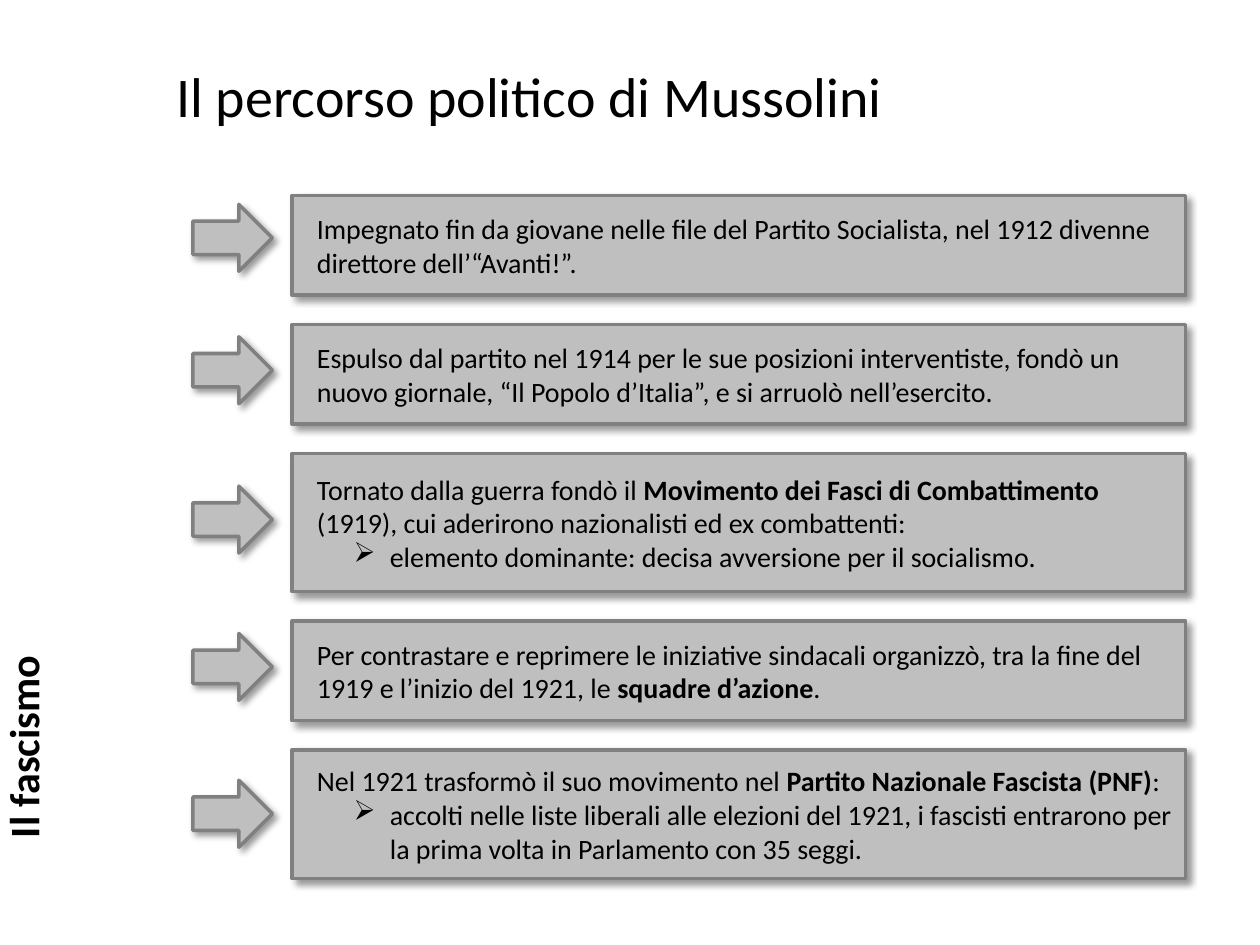
from lxml import etree
from pptx import Presentation
from pptx.dml.color import RGBColor
from pptx.enum.shapes import MSO_SHAPE
from pptx.enum.text import MSO_ANCHOR, MSO_AUTO_SIZE, PP_ALIGN
from pptx.oxml import parse_xml
from pptx.oxml.ns import nsdecls, qn
from pptx.util import Cm, Pt

RECTANGLE, ARROW = MSO_SHAPE.RECTANGLE, MSO_SHAPE.RIGHT_ARROW
MIDDLE, BOTTOM = MSO_ANCHOR.MIDDLE, MSO_ANCHOR.BOTTOM
NO_AUTOFIT = MSO_AUTO_SIZE.NONE
LEFT = PP_ALIGN.LEFT
TITLE_ONLY = 5

BOX_LEFT, BOX_WIDTH, GAP = 5.89, 18.01, 0.59
ARROW_LEFT, ARROW_WIDTH, ARROW_HEIGHT = 3.89, 1.6, 1.35
FIRST_TOP = 3.94

# Each step: box height, arrow distance below the box top, and paragraphs
# as (bulleted, [(text, bold), ...]).
STEPS = [
    (2.01, 0.18, [(False, [
        ("Impegnato fin da giovane nelle file del Partito Socialista, nel 1912 "
         "divenne direttore dell’“Avanti!”.", False)])]),
    (2.01, 0.25, [(False, [
        ("Espulso dal partito nel 1914 per le sue posizioni interventiste, fondò "
         "un nuovo giornale, “Il Popolo d’Italia”, e si arruolò nell’esercito.",
         False)])]),
    (2.79, 0.66, [
        (False, [("Tornato dalla guerra fondò il ", False),
                 ("Movimento dei Fasci di Combattimento ", True),
                 ("(1919), cui aderirono nazionalisti ed ex combattenti:", False)]),
        (True, [("elemento dominante: decisa avversione per il socialismo.",
                 False)])]),
    (2.01, 0.25, [(False, [
        ("Per contrastare e reprimere le iniziative sindacali organizzò, tra la "
         "fine del 1919 e l’inizio del 1921, le ", False),
        ("squadre d’azione", True), (".", False)])]),
    (2.59, 0.61, [
        (False, [("Nel 1921 trasformò il suo movimento nel ", False),
                 ("Partito Nazionale Fascista (PNF)", True), (":", False)]),
        (True, [("accolti nelle liste liberali alle elezioni del 1921, i fascisti "
                 "entrarono per la prima volta in Parlamento con 35 seggi.",
                 False)])]),
]


def color(value):
    return RGBColor.from_string(value)


class SlideBuilder:
    font, ink, fill, outline = "Calibri", "000000", "BFBFBF", "808080"

    def __init__(self, slide):
        self.slide = slide

    def add_spans(self, para, spans, size):
        """Fill a paragraph with (text, bold) spans."""
        para.alignment = LEFT
        for text, bold in spans:
            span = para.add_run()
            span.text = text
            values = {"name": self.font, "size": Pt(size), "bold": bold}
            for name, value in values.items():
                setattr(span.font, name, value)
            span.font.color.rgb = color(self.ink)

    def indent(self, para, bulleted):
        properties = para._p.get_or_add_pPr()
        margin, hanging = (1.72, -0.73) if bulleted else (0.25, 0)
        properties.set("marL", str(Cm(margin)))
        properties.set("indent", str(Cm(hanging)))
        if bulleted:
            etree.SubElement(properties, qn("a:buChar"), char="➢")

    def title(self, text, left, top, width, height):
        title = self.slide.shapes.title
        place = {"left": left, "top": top, "width": width, "height": height}
        for name, value in place.items():
            setattr(title, name, Cm(value))
        frame = title.text_frame
        frame.vertical_anchor = BOTTOM
        frame.auto_size = NO_AUTOFIT
        self.add_spans(frame.paragraphs[0], [(text, False)], 32)

    def side_label(self, text, left, top, width, height):
        """Add a label that reads upwards."""
        label = self.slide.shapes.add_textbox(
            Cm(left), Cm(top), Cm(width), Cm(height))
        label.rotation = 270
        label.text_frame.word_wrap = True
        self.add_spans(label.text_frame.paragraphs[0], [(text, True)], 24)

    def shape(self, kind, left, top, width, height):
        """Add a grey shape with a soft shadow at the lower right."""
        shape = self.slide.shapes.add_shape(
            kind, Cm(left), Cm(top), Cm(width), Cm(height))
        shape.fill.solid()
        shape.fill.fore_color.rgb = color(self.fill)
        shape.line.color.rgb = color(self.outline)
        shape.line.width = Pt(2)
        shape.shadow.inherit = False
        effects = shape._element.spPr.find(qn("a:effectLst"))
        effects.append(parse_xml(
            f'<a:outerShdw {nsdecls("a")} blurRad="{Pt(4)}" dist="{Pt(3)}" '
            f'dir="2700000" algn="tl" rotWithShape="0"><a:srgbClr val="{self.ink}">'
            '<a:alpha val="40000"/></a:srgbClr></a:outerShdw>'))
        return shape

    def step(self, top, height, arrow_drop, paragraphs):
        box = self.shape(RECTANGLE, BOX_LEFT, top, BOX_WIDTH, height)
        frame = box.text_frame
        frame.word_wrap = True
        frame.vertical_anchor = MIDDLE
        for index, (bulleted, spans) in enumerate(paragraphs):
            para = frame.add_paragraph() if index else frame.paragraphs[0]
            self.indent(para, bulleted)
            self.add_spans(para, spans, 16)
        self.shape(ARROW, ARROW_LEFT, top + arrow_drop, ARROW_WIDTH, ARROW_HEIGHT)


def main():
    deck = Presentation()
    deck.slide_width, deck.slide_height = Cm(25.4), Cm(19.05)
    page = SlideBuilder(deck.slides.add_slide(deck.slide_layouts[TITLE_ONLY]))
    page.side_label("Il fascismo", -2.41, 13.61, 5.77, 1.3)
    page.title("Il percorso politico di Mussolini", 3.3, 0.71, 20.83, 2.01)
    top = FIRST_TOP
    for height, arrow_drop, paragraphs in STEPS:
        page.step(top, height, arrow_drop, paragraphs)
        top += height + GAP
    deck.save("out.pptx")


if __name__ == "__main__":
    main()
